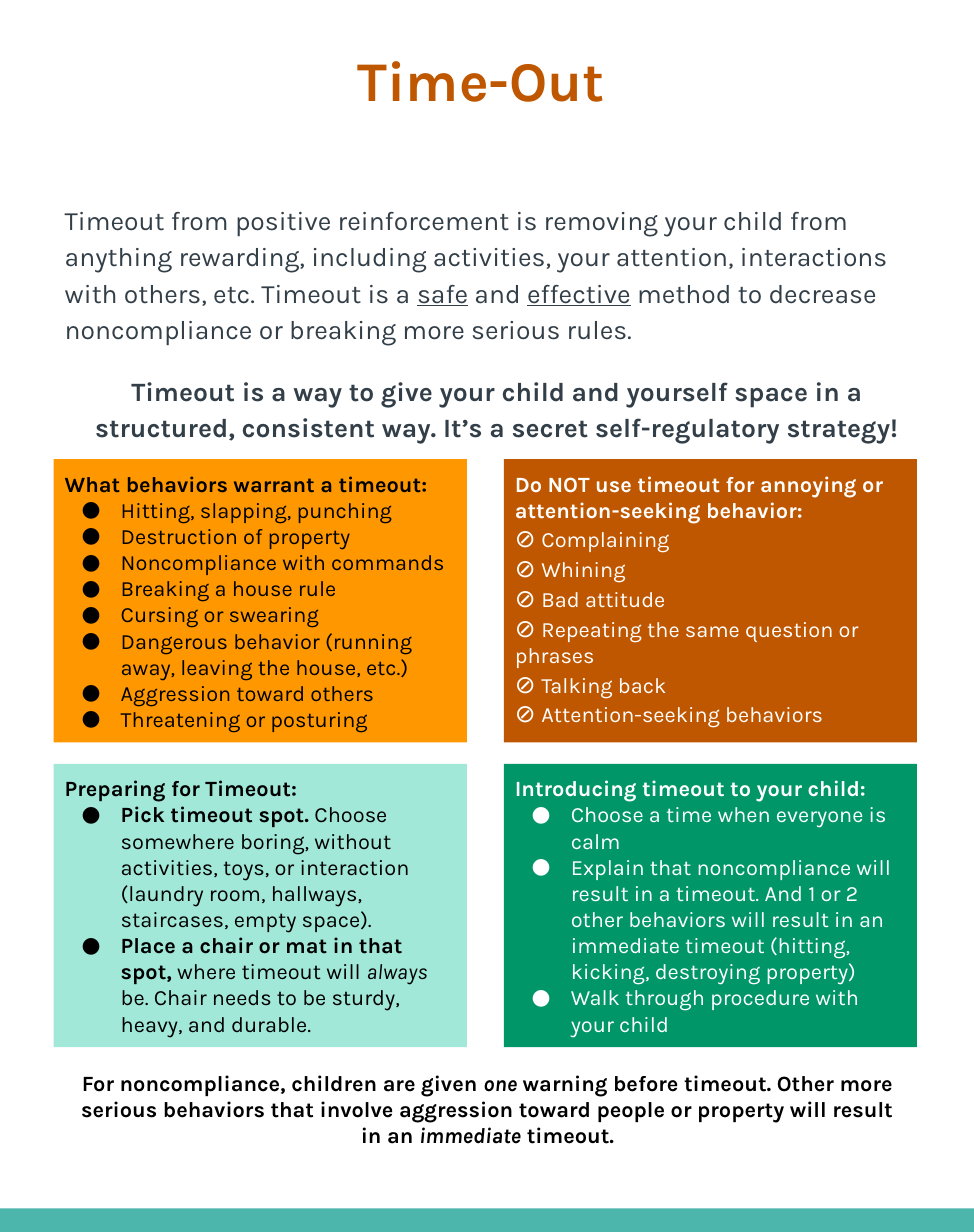
from dataclasses import dataclass

from lxml.etree import SubElement
from pptx import Presentation
from pptx.dml.color import RGBColor
from pptx.enum.shapes import MSO_SHAPE as Shape
from pptx.enum.text import MSO_ANCHOR as Anchor, MSO_AUTO_SIZE as AutoSize, PP_ALIGN as Align
from pptx.oxml.ns import qn
from pptx.util import Inches, Pt

WHITE = RGBColor(0xFF, 0xFF, 0xFF)
BLACK = RGBColor(0x00, 0x00, 0x00)
SLATE = RGBColor(0x33, 0x3F, 0x48)
RUST = RGBColor(0xBF, 0x57, 0x00)
ORANGE = RGBColor(0xFF, 0x98, 0x00)
MINT = RGBColor(0xA1, 0xE8, 0xD9)
GREEN = RGBColor(0x00, 0x96, 0x68)
TEAL = RGBColor(0x4D, 0xB6, 0xAC)
FONT = "Karla"


@dataclass
class Span:
    text: str
    bold: bool = False
    italic: bool = False
    underline: bool = False
    size: float | None = None


@dataclass
class Panel:
    column: int
    row: int
    fill: RGBColor
    ink: RGBColor
    heading: str
    items: list[list[Span]]
    bulleted: bool = True


def prepare(frame) -> None:
    """Give a text frame its wrapping, anchor and margins."""
    frame.word_wrap = True
    frame.auto_size = AutoSize.NONE
    frame.vertical_anchor = Anchor.TOP
    frame.margin_left = frame.margin_right = Inches(0.1)
    frame.margin_top = frame.margin_bottom = Inches(0.1)


def write(para, spans: list[Span], size: float, ink: RGBColor, align=Align.LEFT) -> None:
    para.alignment = align
    para.font.name = FONT
    para.font.size = Pt(size)
    para.font.color.rgb = ink
    for span in spans:
        run = para.add_run()
        run.text = span.text
        run.font.bold = span.bold
        run.font.italic = span.italic
        run.font.underline = span.underline
        if span.size:
            run.font.size = Pt(span.size)


def add_bullet(para, ink: RGBColor) -> None:
    properties = para._p.get_or_add_pPr()
    properties.set("marL", str(Inches(0.5)))
    properties.set("indent", str(Inches(-0.35)))
    color = SubElement(properties, qn("a:buClr"))
    SubElement(color, qn("a:srgbClr"), val=str(ink))
    SubElement(properties, qn("a:buFont"), typeface=FONT)
    SubElement(properties, qn("a:buChar"), char="●")


def add_block(page, left: float, top: float, width: float, height: float, fill: RGBColor):
    block = page.shapes.add_shape(
        Shape.RECTANGLE, Inches(left), Inches(top), Inches(width), Inches(height))
    block.shadow.inherit = False
    block.fill.solid()
    block.fill.fore_color.rgb = fill
    block.line.fill.background()
    return block


def add_text(page, left: float, top: float, width: float, height: float):
    box = page.shapes.add_textbox(Inches(left), Inches(top), Inches(width), Inches(height))
    prepare(box.text_frame)
    return box.text_frame


def add_panel(page, panel: Panel) -> None:
    block = add_block(page, 0.48 + 4.02 * panel.column, 4.1 + 2.72 * panel.row,
                      3.69, 2.53, panel.fill)
    frame = block.text_frame
    prepare(frame)
    write(frame.paragraphs[0], [Span(panel.heading, bold=True)], 14, panel.ink)
    for spans in panel.items:
        para = frame.add_paragraph()
        if panel.bulleted:
            add_bullet(para, panel.ink)
        else:
            spans = [Span("⊘ ", size=16), *spans]
        write(para, spans, 14, panel.ink)


def plain(*lines: str) -> list[list[Span]]:
    return [[Span(line)] for line in lines]


PANELS = [
    Panel(0, 0, ORANGE, BLACK, "What behaviors warrant a timeout:", plain(
        "Hitting, slapping, punching",
        "Destruction of property",
        "Noncompliance with commands",
        "Breaking a house rule",
        "Cursing or swearing",
        "Dangerous behavior (running away, leaving the house, etc.)",
        "Aggression toward others",
        "Threatening or posturing")),
    Panel(1, 0, RUST, WHITE, "Do NOT use timeout for annoying or attention-seeking behavior:", plain(
        "Complaining",
        "Whining",
        "Bad attitude",
        "Repeating the same question or phrases",
        "Talking back",
        "Attention-seeking behaviors"), bulleted=False),
    Panel(0, 1, MINT, BLACK, "Preparing for Timeout:", [
        [Span("Pick timeout spot.", bold=True),
         Span(" Choose somewhere boring, without activities, toys, or interaction "
              "(laundry room, hallways, staircases, empty space).")],
        [Span("Place a chair or mat in that spot,", bold=True),
         Span(" where timeout will "), Span("always", italic=True),
         Span(" be. Chair needs to be sturdy, heavy, and durable.")]]),
    Panel(1, 1, GREEN, WHITE, "Introducing timeout to your child:", plain(
        "Choose a time when everyone is calm",
        "Explain that noncompliance will result in a timeout. And 1 or 2 other behaviors "
        "will result in an immediate timeout (hitting, kicking, destroying property)",
        "Walk through procedure with your child")),
]

INTRO = [
    Span("Timeout from positive reinforcement is removing your child from anything rewarding, "
         "including activities, your attention, interactions with others, etc. Timeout is a "),
    Span("safe", underline=True), Span(" and "), Span("effective", underline=True),
    Span(" method to decrease noncompliance or breaking more serious rules."),
]
MOTTO = [Span("Timeout is a way to give your child and yourself space in a structured, "
              "consistent way. It’s a secret self-regulatory strategy!", bold=True)]
WARNING = [
    Span("For noncompliance, children are given ", bold=True),
    Span("one", bold=True, italic=True),
    Span(" warning before timeout. Other more serious behaviors that involve aggression "
         "toward people or property will result in an ", bold=True),
    Span("immediate", bold=True, italic=True),
    Span(" timeout.", bold=True),
]


def main() -> None:
    deck = Presentation()
    deck.slide_width, deck.slide_height = Inches(8.7), Inches(11)
    page = deck.slides.add_slide(deck.slide_layouts[5])

    # Footer band
    add_block(page, 0, 10.79, 8.7, 0.21, TEAL)

    # Title
    title = page.shapes.title
    title.left, title.top = Inches(0.34), Inches(0.31)
    title.width, title.height = Inches(7.92), Inches(1.1)
    prepare(title.text_frame)
    write(title.text_frame.paragraphs[0], [Span("Time-Out", bold=True)], 36, RUST, Align.CENTER)

    # Introduction
    frame = add_text(page, 0.48, 1.68, 7.92, 1.44)
    intro, motto = frame.paragraphs[0], frame.add_paragraph()
    intro.line_spacing = motto.line_spacing = 1.15
    motto.space_before = motto.space_after = Pt(16)
    write(intro, INTRO, 17, SLATE)
    write(motto, MOTTO, 17, SLATE, Align.CENTER)

    # Four panels
    for panel in PANELS:
        add_panel(page, panel)

    # Closing note
    frame = add_text(page, 0.53, 9.45, 7.65, 0.51)
    write(frame.paragraphs[0], WARNING, 14, BLACK, Align.CENTER)

    deck.save("out.pptx")


if __name__ == "__main__":
    main()
